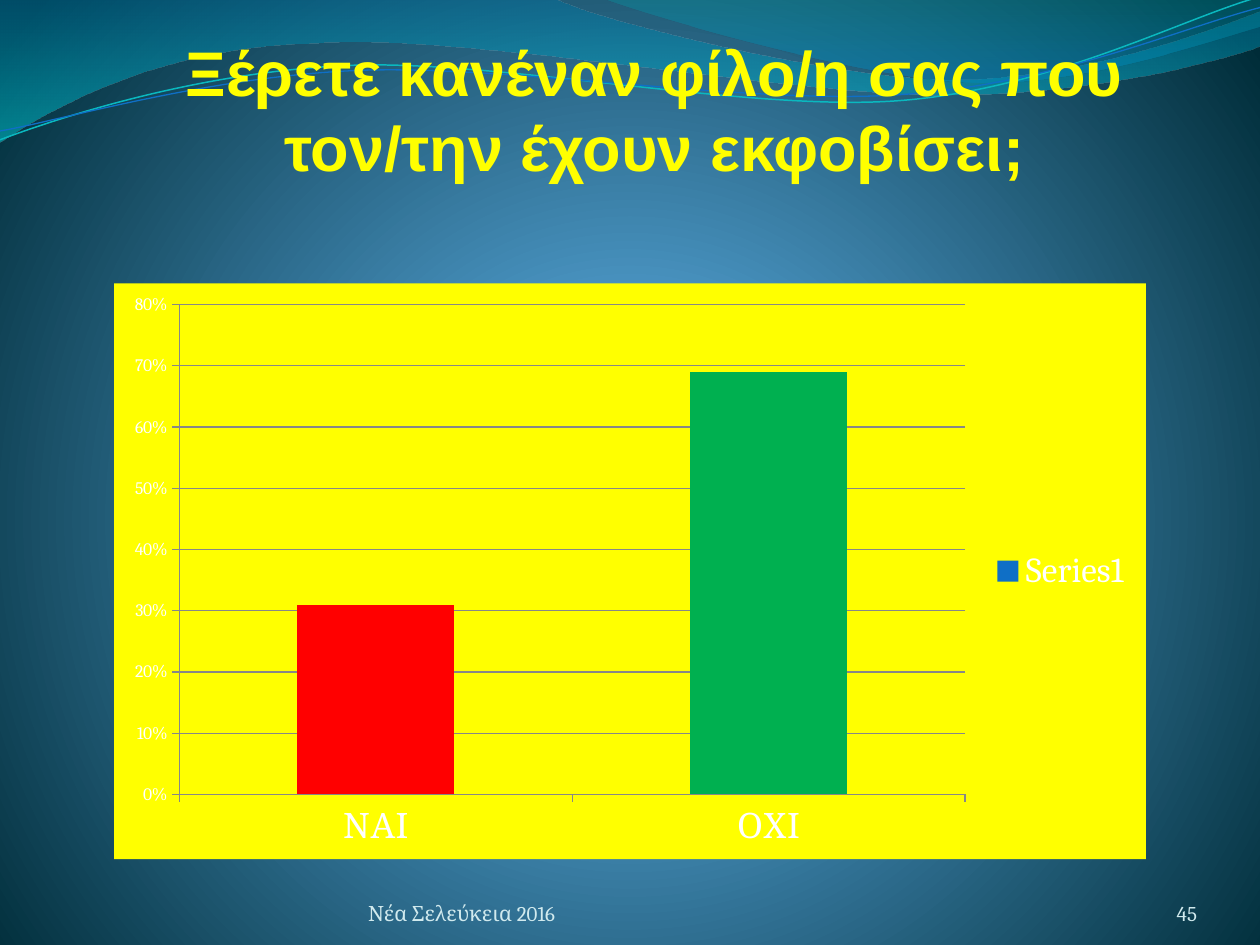
"""Build the survey slide with a column chart of yes and no answers."""
import pptx
import pptx.chart.data
import pptx.dml.color
import pptx.enum.chart
import pptx.enum.text
import pptx.oxml
import pptx.oxml.ns
import pptx.util

Cm, Pt = pptx.util.Cm, pptx.util.Pt
RGB = pptx.dml.color.RGBColor
ALIGN = pptx.enum.text.PP_ALIGN
ANCHOR = pptx.enum.text.MSO_ANCHOR
qn = pptx.oxml.ns.qn

YELLOW, WHITE, PALE = RGB(255, 255, 0), RGB(255, 255, 255), RGB(0xD1, 0xEA, 0xEE)
RED, GREEN, BLUE = RGB(255, 0, 0), RGB(0, 0xB0, 0x50), RGB(0x0F, 0x6F, 0xC6)
TEAL = RGB(0x0A, 0xB8, 0xBF)

TITLE = "Ξέρετε κανέναν φίλο/η σας που τον/την έχουν εκφοβίσει;"
CATS, VALS, HUES = ("ΝΑΙ", "ΟΧΙ"), (0.31, 0.69), (RED, GREEN)
FOOT = [
    ("Νέα Σελεύκεια 2016", 7.42, 9.32, ALIGN.LEFT),
    ("45", 22.02, 2.11, ALIGN.RIGHT),
]
BACK = [(0, "4AA0D6", 100), (25, "4C98C7", 100), (100, "002C38", 100)]
RADIAL = '<a:path path="circle"><a:fillToRect l="10000" t="110000" r="10000" b="100000"/></a:path>'
DOWN = '<a:lin ang="5400000" scaled="1"/>'
GRAIN = 1000
WAVES = [
    ([(0, 0), (4.4, -0.01), (4.76, 0.17, 6.64, 0.63, 7.58, 0.63),
      (8.53, 0.63, 9.58, 0.26, 10, 0.09), (10.01, 0.36),
      (9.83, 0.44, 8.7, 0.76, 7.46, 0.75), (6.22, 0.75, 3.82, 0.28, 2.57, 0.34),
      (1.29, 0.36, 0.46, 0.83, -0.01, 1.13), (0, 0)],
     [(0, "0074A1", 45), (100, "00C6CF", 55)]),
    ([(4.79, -0.01), (5.09, 0.11, 6.82, 0.62, 7.69, 0.65),
      (8.56, 0.69, 9.61, 0.32, 10, 0.21), (10, 0), (4.79, -0.01)],
     [(0, "00A1A9", 30), (80, "008BBF", 45)]),
]
LINES = [
    ([(0, 1.11), (0.48, 0.93, 1.58, 0.57, 2.77, 0.52),
      (3.95, 0.47, 5.93, 0.89, 7.13, 0.8), (8.33, 0.71, 9.38, 0.15, 9.98, -0.02)],
     TEAL, 0.85),
    ([(0, 1.04), (0.47, 0.96, 1.64, 0.61, 2.83, 0.56),
      (4.03, 0.51, 5.97, 0.84, 7.17, 0.75), (8.36, 0.67, 9.41, 0.21, 10, 0.06)],
     BLUE, 0.75),
]


def shade(node, stops, tail):
    old = node.find(".//" + qn("a:gradFill"))
    rows = "".join(
        f'<a:gs pos="{at * 1000}"><a:srgbClr val="{hue}">'
        f'<a:alpha val="{part * 1000}"/></a:srgbClr></a:gs>'
        for at, hue, part in stops)
    new = pptx.oxml.parse_xml(
        f'<a:gradFill {pptx.oxml.ns.nsdecls("a")} rotWithShape="1">'
        f"<a:gsLst>{rows}</a:gsLst>{tail}</a:gradFill>")
    old.getparent().replace(old, new)


def bend(shape, steps):
    legs = iter(list(shape.element.iter(qn("a:lnTo"))))
    for step in steps[1:]:
        group = [next(legs) for _ in range(len(step) // 2)]
        if len(group) == 3:
            curve = pptx.oxml.parse_xml(f'<a:cubicBezTo {pptx.oxml.ns.nsdecls("a")}/>')
            group[0].addprevious(curve)
            for leg in group:
                curve.append(leg[0])
                leg.getparent().remove(leg)


def draw(shapes, steps, close):
    dots = [(step[i] * GRAIN, step[i + 1] * GRAIN)
            for step in steps for i in range(0, len(step), 2)]
    pen = shapes.build_freeform(*dots[0], scale=Cm(2.54) / GRAIN)
    pen.add_line_segments(dots[1:], close=close)
    shape = pen.convert_to_shape()
    shape.shadow.inherit = False
    bend(shape, steps)
    return shape


def style(font, size, hue, face="Cambria", bold=False):
    font.size, font.name, font.bold = Pt(size), face, bold
    font.color.rgb = hue


def write(frame, text, align, *look):
    frame.word_wrap = True
    para = frame.paragraphs[0]
    para.alignment = align
    run = para.add_run()
    run.text = text
    style(run.font, *look)


def plot(shapes):
    kinds = pptx.enum.chart
    data = pptx.chart.data.CategoryChartData(number_format="0%")
    data.categories = CATS
    data.add_series("", VALS)
    chart = shapes.add_chart(kinds.XL_CHART_TYPE.COLUMN_CLUSTERED,
                             Cm(2.3), Cm(5.71), Cm(20.8), Cm(11.61), data).chart
    chart.has_title = False
    style(chart.font, 10, WHITE)
    chart.has_legend = True
    chart.legend.position = kinds.XL_LEGEND_POSITION.RIGHT
    chart.legend.include_in_layout = False
    style(chart.legend.font, 20, WHITE)
    cat, val = chart.category_axis, chart.value_axis
    style(cat.tick_labels.font, 20, WHITE)
    val.tick_labels.number_format = "0%"
    val.tick_labels.number_format_is_linked = False
    val.has_major_gridlines = True
    for axis in (cat, val):
        axis.major_tick_mark = kinds.XL_TICK_MARK.OUTSIDE
    bars = chart.plots[0]
    bars.gap_width, bars.vary_by_categories = 150, False
    row = bars.series[0]
    name = chart.element.find(".//" + qn("c:ser")).find(qn("c:tx"))
    name.getparent().remove(name)
    row.format.fill.solid()
    row.format.fill.fore_color.rgb = BLUE
    for i, hue in enumerate(HUES):
        fill = row.points[i].format.fill
        fill.solid()
        fill.fore_color.rgb = hue
    area = pptx.oxml.parse_xml(
        f'<c:spPr {pptx.oxml.ns.nsdecls("c", "a")}><a:solidFill>'
        f'<a:srgbClr val="{YELLOW}"/></a:solidFill><a:ln><a:noFill/></a:ln></c:spPr>')
    chart.element.find(qn("c:chart")).addnext(area)


def main():
    deck = pptx.Presentation()
    deck.slide_width, deck.slide_height = Cm(25.4), Cm(19.05)
    slide = deck.slides.add_slide(deck.slide_layouts[5])
    shapes = slide.shapes
    slide.background.fill.gradient()
    shade(slide.element, BACK, RADIAL)
    for steps, stops in WAVES:
        wave = draw(shapes, steps, True)
        wave.line.fill.background()
        wave.fill.gradient()
        shade(wave.element, stops, DOWN)
    for steps, hue, width in LINES:
        line = draw(shapes, steps, False)
        line.fill.background()
        line.line.color.rgb, line.line.width = hue, Pt(width)
    title = shapes.title
    title.left, title.top, title.width, title.height = Cm(1.5), Cm(0.53), Cm(23.39), Cm(3.33)
    write(title.text_frame, TITLE, ALIGN.CENTER, 36, YELLOW, "Arial", True)
    title.text_frame.vertical_anchor = ANCHOR.MIDDLE
    wave.element.getparent().append(title.element)
    plot(shapes)
    for text, left, width, align in FOOT:
        frame = shapes.add_textbox(Cm(left), Cm(17.65), Cm(width), Cm(1.02)).text_frame
        frame.margin_left = frame.margin_right = frame.margin_top = frame.margin_bottom = 0
        frame.vertical_anchor = ANCHOR.BOTTOM
        write(frame, text, align, 12, PALE)
    deck.save("out.pptx")


if __name__ == "__main__":
    main()
